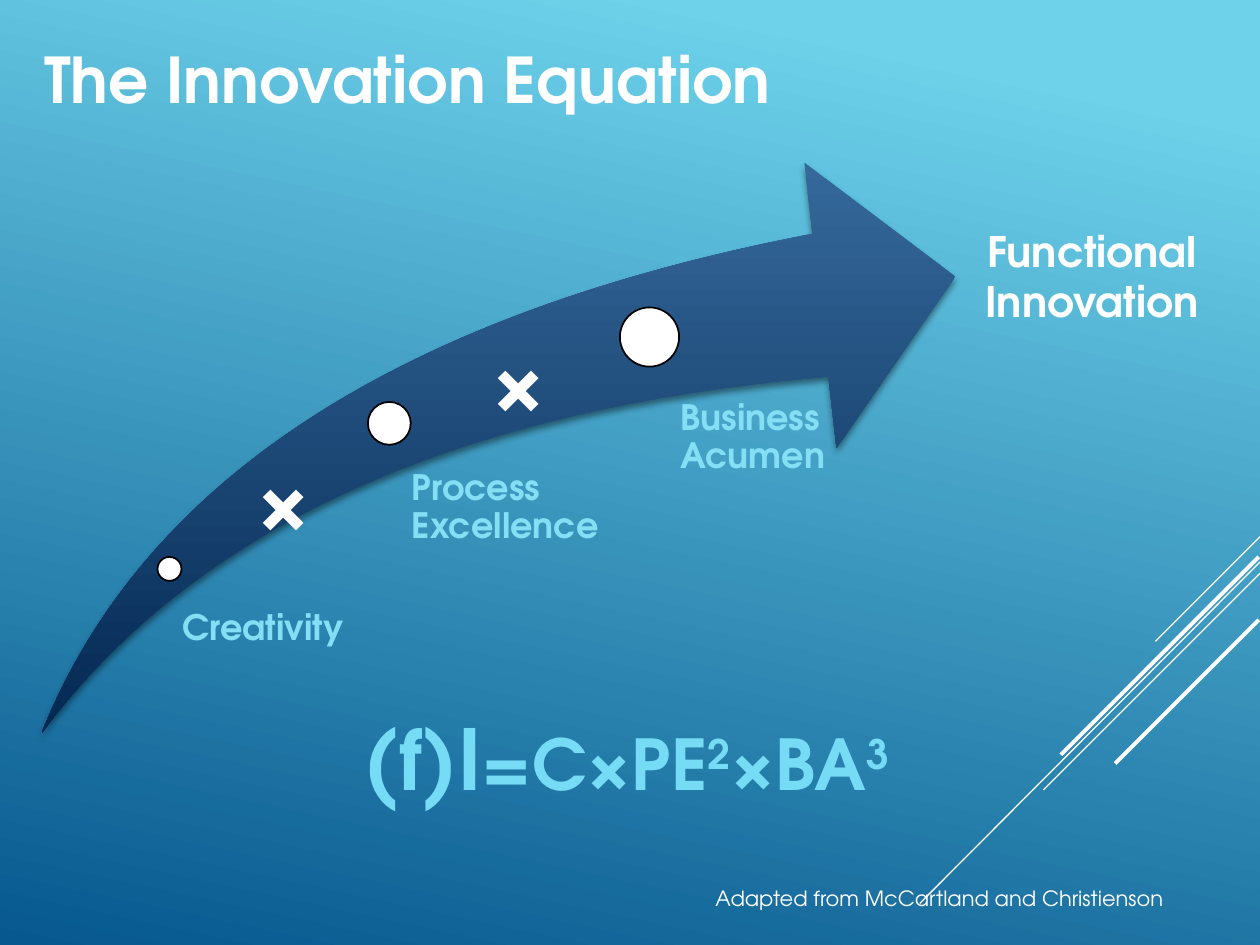
"""Build the Innovation Equation slide: a rising arrow with three milestones and a formula."""
from lxml import etree
from pptx import Presentation
from pptx.dml.color import RGBColor
from pptx.enum.shapes import MSO_CONNECTOR, MSO_SHAPE
from pptx.enum.text import MSO_ANCHOR, PP_ALIGN
from pptx.oxml import parse_xml
from pptx.oxml.ns import nsdecls, qn
from pptx.util import Inches, Pt

LINE = MSO_CONNECTOR.STRAIGHT
SWOOSH, OVAL = MSO_SHAPE.SWOOSH_ARROW, MSO_SHAPE.OVAL
LEFT, CENTER = PP_ALIGN.LEFT, PP_ALIGN.CENTER
FONT = "TeX Gyre Adventor"
COLORS = {
    "sky": "6ED2EB", "ocean": "06588E", "arrow_top": "35699B", "arrow_base": "042853",
    "white": "FFFFFF", "black": "000000", "label": "84DFF5", "formula": "76DBF4",
}
RGB = {name: RGBColor.from_string(value) for name, value in COLORS.items()}


def set_gradient(fill, angle, stops):
    fill.gradient()
    fill.gradient_angle = angle
    for stop, (position, color) in zip(fill.gradient_stops, stops):
        stop.position = position
        stop.color.rgb = RGB[color]


def add_text(box, runs, color, bold=True, align=LEFT):
    tf = box.text_frame
    tf.word_wrap = True
    p = tf.paragraphs[0]
    p.alignment = align
    for text, size, baseline in runs:
        r = p.add_run()
        r.text = text
        r.font.name, r.font.size, r.font.bold = FONT, Pt(size), bold
        r.font.color.rgb = RGB[color]
        if baseline:
            r._r.get_or_add_rPr().set("baseline", str(baseline * 1000))
    return tf


prs = Presentation()
prs.slide_width, prs.slide_height = Inches(10), Inches(7.5)
s = prs.slides.add_slide(prs.slide_layouts[5])
set_gradient(s.background.fill, 258, [(0.1, "sky"), (1, "ocean")])

title = s.shapes.title
title.left, title.top, title.width, title.height = Inches(0.25), Inches(0), Inches(9), Inches(1.25)
tf = add_text(title, [("The Innovation Equation", 36, 0)], "white")
tf.vertical_anchor = MSO_ANCHOR.MIDDLE

for x1, y1, x2, y2, weight in [
    (10, 4.26, 9.17, 5.09, 0.75),
    (10, 4.46, 7.3, 7.17, 0.75),
    (10, 4.55, 8.28, 6.27, 0.75),
    (9.99, 4.42, 8.42, 5.99, 2.25),
    (9.99, 4.92, 8.85, 6.06, 2.25),
]:
    line = s.shapes.add_connector(LINE, Inches(x1), Inches(y1), Inches(x2), Inches(y2))
    line.line.color.rgb = RGB["white"]
    line.line.width = Pt(weight)
    etree.SubElement(line._element.spPr, qn("a:effectLst"))

arrow = s.shapes.add_shape(SWOOSH, Inches(0.33), Inches(1.29), Inches(7.25), Inches(4.53))
arrow.adjustments[0] = arrow.adjustments[1] = 0.25
set_gradient(arrow.fill, 270, [(0, "arrow_top"), (1, "arrow_base")])
arrow.line.fill.background()
arrow._element.spPr.append(parse_xml(
    f'<a:effectLst {nsdecls("a")}><a:outerShdw blurRad="{Pt(4)}" dist="{Pt(3)}" dir="5400000" '
    f'rotWithShape="0"><a:srgbClr val="{COLORS["black"]}"><a:alpha val="46000"/></a:srgbClr>'
    '</a:outerShdw></a:effectLst>'))

for text, dot_x, dot_y, size, x, y, w, h, inset in [
    ("Creativity", 1.25, 4.42, 0.19, 1.35, 4.84, 1.69, 0.66, 0.1),
    ("Process Excellence", 2.92, 3.19, 0.34, 3.09, 3.73, 1.74, 1.72, 0.18),
    ("Business Acumen", 4.92, 2.44, 0.47, 5.15, 3.18, 1.74, 2.13, 0.25),
]:
    dot = s.shapes.add_shape(OVAL, Inches(dot_x), Inches(dot_y), Inches(size), Inches(size))
    dot.shadow.inherit = False
    dot.fill.solid()
    dot.fill.fore_color.rgb = RGB["white"]
    dot.line.color.rgb = RGB["black"]
    dot.line.width = Pt(1)
    label = s.shapes.add_textbox(Inches(x), Inches(y), Inches(w), Inches(h))
    tf = add_text(label, [(text, 20, 0)], "label")
    tf.margin_left = Inches(inset)
    tf.margin_top = tf.margin_right = tf.margin_bottom = 0
    tf.paragraphs[0].line_spacing = 0.9

formula = [("(f)I", 48, 0), ("=C×PE", 40, 0), ("2", 40, 30), ("×BA", 40, 0), ("3", 40, 30)]
for runs, x, y, w, h, color, bold, align in [
    ([("Adapted from McCartland and Christienson", 12, 0)], 5.58, 6.98, 4.25, 0.3, "white", False, LEFT),
    ([("Functional Innovation", 24, 0)], 7.39, 1.74, 2.55, 0.91, "white", True, CENTER),
    ([("×", 48, 0)], 1.94, 3.5, 0.5, 0.91, "white", True, LEFT),
    ([("×", 48, 0)], 3.8, 2.56, 0.5, 0.91, "white", True, LEFT),
    (formula, 2.44, 5.56, 5.06, 0.91, "formula", True, CENTER),
]:
    box = s.shapes.add_textbox(Inches(x), Inches(y), Inches(w), Inches(h))
    add_text(box, runs, color, bold, align)

prs.save("out.pptx")
